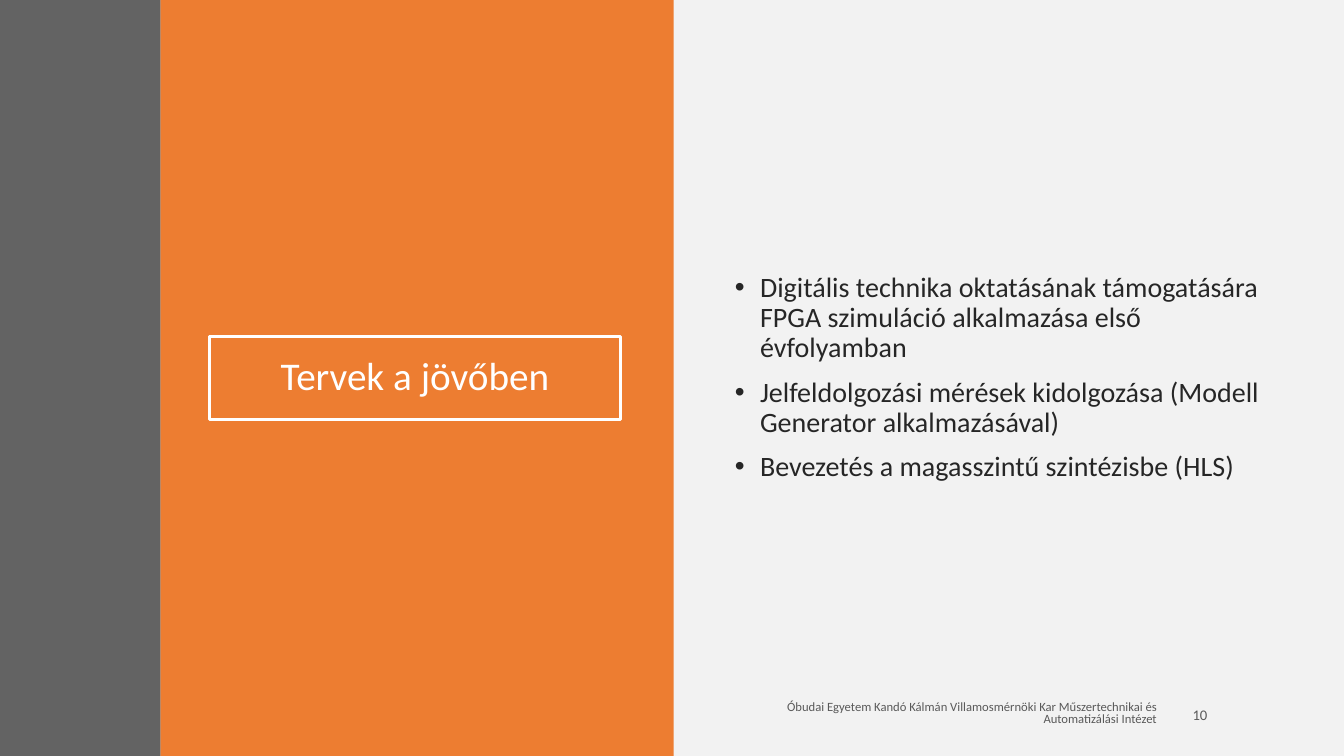
from lxml import etree
from pptx import Presentation
from pptx import util as u
from pptx.dml.color import RGBColor
from pptx.enum import shapes, text
from pptx.oxml.ns import qn

WIDTH, HEIGHT = 13.33, 7.5
BAND = 1.59   # width of the grey band
PANEL = 5.09  # width of the orange panel
FONT = "Calibri"
COLORS = {
    "background": "F2F2F2",
    "panel": "ED7D31",
    "band": "404040",
    "title": "FFFFFF",
    "body": "262626",
    "footer": "595959",
}
PLANS = [
    "Digitális technika oktatásának támogatására FPGA szimuláció alkalmazása első évfolyamban",
    "Jelfeldolgozási mérések kidolgozása (Modell Generator alkalmazásával)",
    "Bevezetés a magasszintű szintézisbe (HLS)",
]
INSTITUTE = ("Óbudai Egyetem Kandó Kálmán Villamosmérnöki Kar "
             "Műszertechnikai és Automatizálási Intézet")


def color(name):
    return RGBColor.from_string(COLORS[name])


def inches(box):
    return [u.Inches(length) for length in box]


def write(shape, lines, *, size, ink, align=text.PP_ALIGN.LEFT,
          spacing=1.0, before=0, bullet=False):
    """Fill a shape with one formatted paragraph per line."""
    frame = shape.text_frame
    frame.word_wrap = True
    frame.auto_size = text.MSO_AUTO_SIZE.NONE
    frame.vertical_anchor = text.MSO_ANCHOR.MIDDLE
    frame.text = "\n".join(lines)
    for paragraph in frame.paragraphs:
        paragraph.alignment = align
        paragraph.line_spacing = spacing
        paragraph.space_before = u.Pt(before)
        font = paragraph.runs[0].font
        font.name, font.size = FONT, u.Pt(size)
        font.color.rgb = color(ink)
        if bullet:
            add_bullet(paragraph)


def add_bullet(paragraph, indent=0.25):
    properties = paragraph._p.get_or_add_pPr()
    properties.set("marL", str(u.Inches(indent)))
    properties.set("indent", str(-u.Inches(indent)))
    etree.SubElement(properties, qn("a:buFont")).set("typeface", "Arial")
    etree.SubElement(properties, qn("a:buChar")).set("char", "•")


def add_block(slide, box, fill, opacity=100):
    block = slide.shapes.add_shape(shapes.MSO_SHAPE.RECTANGLE, *inches(box))
    block.shadow.inherit = False
    block.fill.solid()
    block.fill.fore_color.rgb = color(fill)
    block.line.fill.background()
    if opacity < 100:
        tone = block._element.spPr.find(".//" + qn("a:srgbClr"))
        etree.SubElement(tone, qn("a:alpha")).set("val", str(opacity * 1000))


def add_text(slide, box, lines, **style):
    write(slide.shapes.add_textbox(*inches(box)), lines, **style)


def title_panel(slide, left, width):
    """Orange panel and grey band, with the framed title on top."""
    add_block(slide, (left, 0, width, HEIGHT), "panel")
    add_block(slide, (0, 0, left, HEIGHT), "band", opacity=80)
    title = slide.shapes.title
    frame_width, frame_height = 0.8 * width, 0.83
    title.left, title.top, title.width, title.height = inches(
        (left + 0.49, (HEIGHT - frame_height) / 2, frame_width, frame_height))
    title.line.color.rgb = color("title")
    title.line.width = u.Pt(2)
    write(title, ["Tervek a jövőben"], size=28, ink="title",
          align=text.PP_ALIGN.CENTER, spacing=0.9)
    # Bring the title in front of the blocks
    slide.shapes._spTree.append(title._element)


def plan_list(slide, left):
    height = 5.06
    add_text(slide, (left + 0.51, (HEIGHT - height) / 2, 5.53, height), PLANS,
             size=20, ink="body", spacing=0.9, before=10, bullet=True)


def footer(slide, left):
    add_text(slide, (left + 0.42, 6.91, 4.47, 0.35), [INSTITUTE],
             size=9, ink="footer", align=text.PP_ALIGN.RIGHT, spacing=0.8)
    add_text(slide, (left + 5.05, 6.89, 0.69, 0.4), ["10"],
             size=10.5, ink="footer")


def main():
    presentation = Presentation()
    presentation.slide_width, presentation.slide_height = inches((WIDTH, HEIGHT))
    slide = presentation.slides.add_slide(presentation.slide_layouts[5])
    slide.background.fill.solid()
    slide.background.fill.fore_color.rgb = color("background")
    title_panel(slide, BAND, PANEL)
    plan_list(slide, BAND + PANEL)
    footer(slide, BAND + PANEL)
    presentation.save("out.pptx")


if __name__ == "__main__":
    main()
